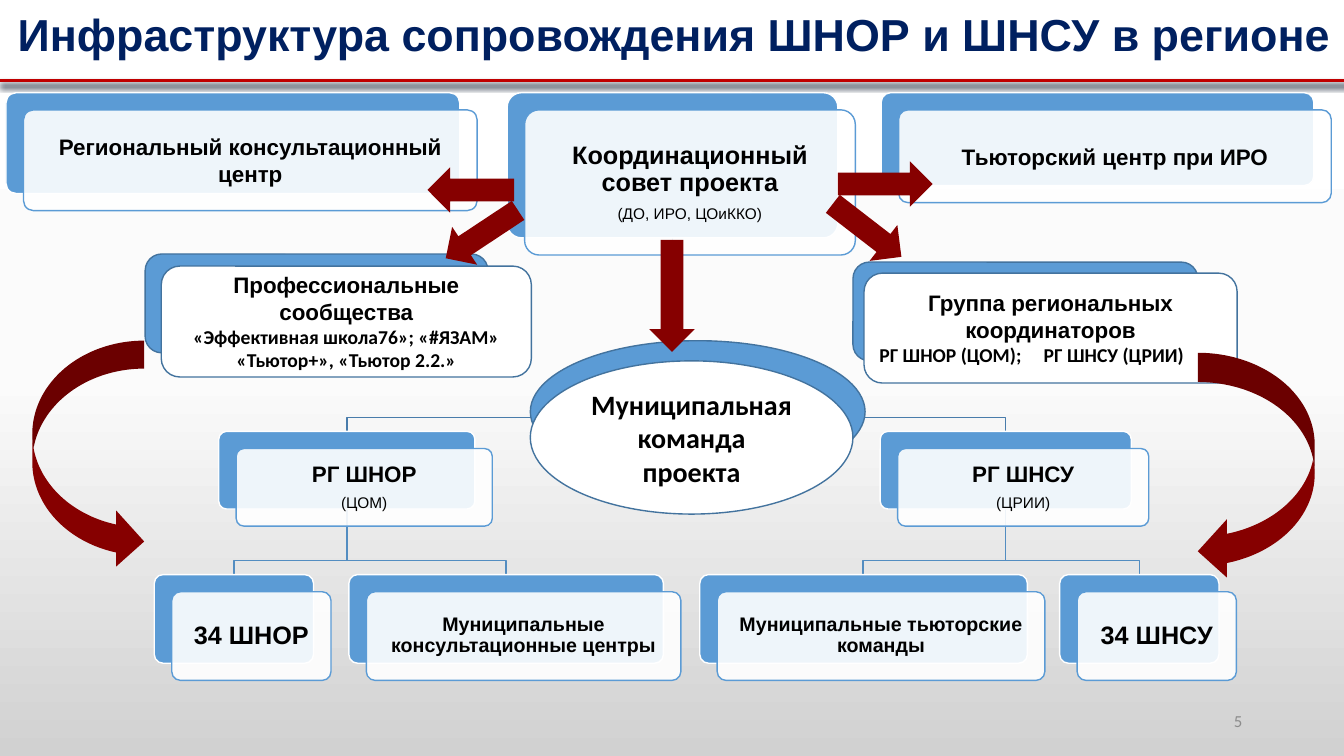
from copy import deepcopy

from lxml.etree import SubElement
from pptx import Presentation
from pptx.dml.color import RGBColor
from pptx.enum.shapes import MSO_CONNECTOR, MSO_SHAPE as SHAPE
from pptx.enum.text import MSO_ANCHOR as ANCHOR, PP_ALIGN as ALIGN
from pptx.oxml.ns import qn
from pptx.util import Inches, Pt

# Grid: 75 rows of square cells, a tenth of an inch each
SLIDE_W, SLIDE_H = Inches(13.33), Inches(7.5)
CELL = SLIDE_H / 75

BLACK = RGBColor(0, 0, 0)
WHITE = RGBColor(0xFF, 0xFF, 0xFF)
NAVY = RGBColor(0x00, 0x20, 0x60)
BLUE = RGBColor(0x5B, 0x9B, 0xD5)
EDGE = RGBColor(0x43, 0x73, 0x9E)
BRANCH = RGBColor(0x53, 0x8D, 0xC1)
TRUNK = RGBColor(0x49, 0x7C, 0xAB)
RED = RGBColor(0xC0, 0x00, 0x00)
MAROON = RGBColor(0x86, 0x00, 0x00)
GREY = RGBColor(0x8C, 0x8C, 0x8C)
BACKDROP = ((0, WHITE), (0.5, RGBColor(0xFB, 0xFB, 0xFB)),
            (1, RGBColor(0xD1, 0xD1, 0xD1)))


def cells(*counts):
    return [round(n * CELL) for n in counts]


def paint_backdrop(slide):
    fill = slide.background.fill
    fill.gradient()
    fill.gradient_angle = 270
    stop_list = slide.element.find(".//" + qn("a:gsLst"))
    stop_list.append(deepcopy(stop_list[0]))
    for stop, (position, color) in zip(fill.gradient_stops, BACKDROP):
        stop.position = position
        stop.color.rgb = color


def write(frame, lines, color=BLACK, inset=(1, 0.5), anchor=ANCHOR.MIDDLE,
          align=ALIGN.CENTER, spacing=None):
    """Each line is (text, size, font, bold), optionally with a tab stop."""
    frame.word_wrap = True
    frame.vertical_anchor = anchor
    frame.margin_left = frame.margin_right = cells(inset[0])[0]
    frame.margin_top = frame.margin_bottom = cells(inset[1])[0]
    for i, (text, size, font, bold, *tab) in enumerate(lines):
        para = frame.add_paragraph() if i else frame.paragraphs[0]
        para.alignment = ALIGN.LEFT if tab else align
        if spacing:
            para.line_spacing = spacing
            para.space_after = Pt(round(size * 0.35, 1))
        if tab:
            tabs = SubElement(para._p.get_or_add_pPr(), qn("a:tabLst"))
            SubElement(tabs, qn("a:tab"), pos=str(cells(tab[0])[0]), algn="l")
        run = para.add_run()
        run.text = text
        run.font.size, run.font.name, run.font.bold = Pt(size), font, bold
        run.font.color.rgb = color


def add_label(slide, box, lines, **style):
    write(slide.shapes.add_textbox(*cells(*box)).text_frame, lines, **style)


def add_block(slide, kind, box, fill, edge=None, corner=None, turn=0):
    block = slide.shapes.add_shape(kind, *cells(*box))
    block.shadow.inherit = False
    block.fill.solid()
    block.fill.fore_color.rgb = fill
    if edge is None:
        block.line.fill.background()
    else:
        block.line.color.rgb = edge
        block.line.width = Pt(1)
    if corner is not None:
        block.adjustments[0] = corner
    block.rotation = turn
    return block


def add_card(slide, box, lines, spacing=0.9):
    """Blue plate with a translucent white plate shifted over it."""
    x, y, w, h = box
    add_block(slide, SHAPE.ROUNDED_RECTANGLE, box, BLUE, WHITE, 0.1)
    front = add_block(slide, SHAPE.ROUNDED_RECTANGLE,
                      (x + 1.73, y + 1.7, w, h), WHITE, BLUE, 0.1)
    tint = front.element.spPr.find(qn("a:solidFill"))[0]
    SubElement(tint, qn("a:alpha"), val="90000")
    write(front.text_frame, lines, inset=(0.7, 0.7), spacing=spacing)


def add_panel(slide, kind, back, front, lines, inset=(1, 0.5)):
    """Blue backing with an opaque white front."""
    add_block(slide, kind, back, BLUE, EDGE)
    block = add_block(slide, kind, front, WHITE, EDGE)
    write(block.text_frame, lines, inset=inset)


def add_elbow(slide, start, end, color):
    (x0, y0), (x1, y1) = start, end
    bend = y1 - 1.4
    builder = slide.shapes.build_freeform(*cells(x0, y0))
    builder.add_line_segments(
        [cells(x0, bend), cells(x1, bend), cells(x1, y1)], close=False)
    elbow = builder.convert_to_shape()
    elbow.shadow.inherit = False
    elbow.fill.background()
    elbow.line.color.rgb = color
    elbow.line.width = Pt(1)


def add_title_rule(slide):
    x0, y, x1 = cells(0, 8, 133.8)
    rule = slide.shapes.add_connector(MSO_CONNECTOR.STRAIGHT, x0, y, x1, y)
    rule.line.color.rgb = RED
    rule.line.width = Pt(2.5)
    effects = SubElement(rule._element.spPr, qn("a:effectLst"))
    shadow = SubElement(effects, qn("a:outerShdw"), blurRad=str(Pt(4)),
                        dist=str(Pt(3)), dir="5400000", rotWithShape="0")
    SubElement(shadow, qn("a:srgbClr"), val="333F50")


def bold(text, size, font="Arial", *tab):
    return (text, size, font, True, *tab)


def small(text):
    return (text, 11, "Arial", False)


def main():
    prs = Presentation()
    prs.slide_width, prs.slide_height = SLIDE_W, SLIDE_H
    slide = prs.slides.add_slide(prs.slide_layouts[6])
    paint_backdrop(slide)

    # Heading and page number
    add_title_rule(slide)
    add_label(slide, (0, 0, 133.8, 6.7),
              [bold("Инфраструктура сопровождения ШНОР и ШНСУ в регионе", 32)],
              color=NAVY, inset=(1.3, 0.7), anchor=ANCHOR.TOP)
    add_label(slide, (94.2, 69.5, 30, 4), [("5", 12, "Calibri", False)],
              color=GREY, align=ALIGN.RIGHT)

    # Tree lines: council to working groups, groups to their members
    for group_x, members in ((34.4, (23.2, 50.2)), (99.7, (85.6, 113))):
        add_elbow(slide, (66.7, 23.6), (group_x, 42.8), TRUNK)
        for member_x in members:
            add_elbow(slide, (group_x, 50.4), (member_x, 57), BRANCH)

    # Top row
    add_card(slide, (0.6, 9.2, 45, 10),
             [bold("Региональный консультационный центр", 16)], None)
    add_card(slide, (50.3, 9.2, 32.8, 14.4),
             [bold("Координационный совет проекта", 18),
              small("(ДО, ИРО, ЦОиККО)")])
    add_card(slide, (87.4, 9.2, 42.9, 9.2),
             [bold("Тьюторский центр при ИРО", 16)], None)

    # Working groups
    for x, w, name, base in ((21.7, 25.4, "РГ ШНОР", "(ЦОМ)"),
                             (87.3, 24.9, "РГ ШНСУ", "(ЦРИИ)")):
        add_card(slide, (x, 42.8, w, 7.7), [bold(name, 16), small(base)])

    # Bottom row
    for x, w, text, size in (
            (15.3, 15.8, "34 ШНОР", 18),
            (34.6, 31.2, "Муниципальные консультационные центры", 14),
            (69.4, 32.5, "Муниципальные тьюторские команды", 14),
            (105.1, 15.8, "34 ШНСУ", 18)):
        add_card(slide, (x, 57, w, 8.8), [bold(text, size)])

    # Municipal team, communities and coordinators
    add_panel(slide, SHAPE.OVAL, (52.6, 33.8, 33.2, 14.1),
              (52.6, 35.8, 32, 15.2),
              [bold("Муниципальная команда проекта", 20, "Calibri")],
              inset=(1.3, 0.7))
    add_panel(slide, SHAPE.ROUNDED_RECTANGLE, (14.4, 25.2, 34, 9.8),
              (16, 26.4, 36.7, 11),
              [bold("Профессиональные сообщества", 16),
               bold("«Эффективная школа76»; «#ЯЗАМ»", 14, "Calibri"),
               bold("«Тьютор+», «Тьютор 2.2.»", 14, "Calibri")])
    add_panel(slide, SHAPE.ROUNDED_RECTANGLE, (84.6, 26, 34.2, 9.8),
              (85.7, 27.1, 37, 10.9),
              [bold("Группа региональных координаторов", 16),
               bold("РГ ШНОР (ЦОМ);\tРГ ШНСУ (ЦРИИ)", 14, "Calibri", 16.3)])

    # Arrows
    for kind, box, turn in (
            (SHAPE.RIGHT_ARROW, (83.1, 16, 9.4, 4.5), 0),
            (SHAPE.LEFT_ARROW, (42.4, 16.6, 8.6, 4.5), 0),
            (SHAPE.LEFT_ARROW, (43.5, 21, 8.6, 4.5), 326.5),
            (SHAPE.LEFT_ARROW, (81.7, 20.6, 8.6, 4.5), 217.7),
            (SHAPE.LEFT_ARROW, (61.1, 27.1, 11.1, 4.5), 270),
            (SHAPE.CURVED_RIGHT_ARROW, (3.2, 33.8, 11.1, 22.7), 0),
            (SHAPE.CURVED_LEFT_ARROW, (118.8, 35, 11.6, 22.6), 0)):
        add_block(slide, kind, box, MAROON, turn=turn)

    prs.save("out.pptx")


if __name__ == "__main__":
    main()
